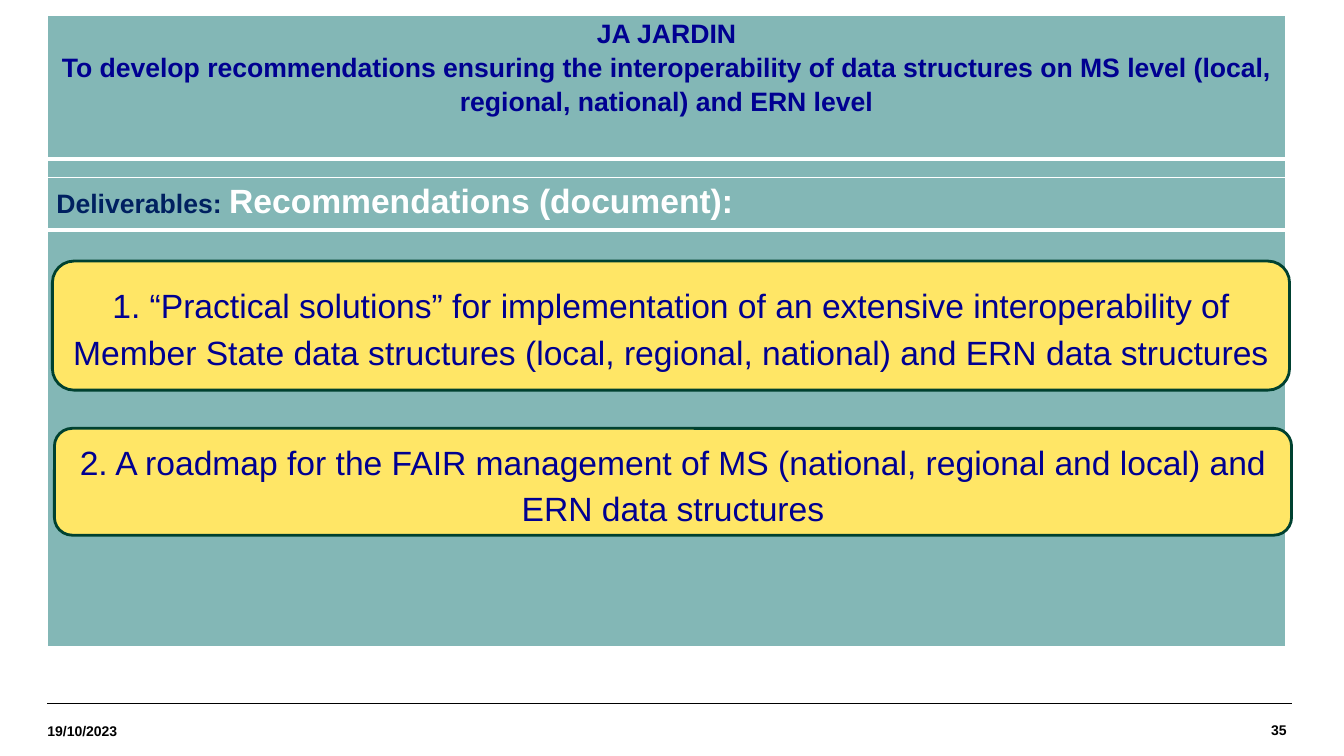
from pptx import Presentation
from pptx.util import Inches, Pt
from pptx.dml.color import RGBColor
from pptx.enum.shapes import MSO_CONNECTOR, MSO_SHAPE
from pptx.enum.text import MSO_ANCHOR, PP_ALIGN
from pptx.oxml import parse_xml
from pptx.oxml.ns import nsdecls
from lxml.etree import SubElement

# Content
HEAD = [
    "JA JARDIN",
    "To develop recommendations ensuring the interoperability of data structures "
    "on MS level (local, regional, national) and ERN level",
]
GOALS = [("Deliverables: ", "navy", "head"), ("Recommendations (document):", "white", "body")]
CARDS = [
    ("1. “Practical solutions” for implementation of an extensive interoperability of "
     "Member State data structures (local, regional, national) and ERN data structures",
     0.52, 2.59, 1.28),
    ("2. A roadmap for the FAIR management of MS (national, regional and local) "
     "and ERN data structures", 0.54, 4.25, 1.06),
]
DATE, PAGE = "19/10/2023", "35"

THEME = {
    "font": "Arial",
    "color": {"blue": "000091", "navy": "002060", "white": "FFFFFF", "black": "000000",
              "teal": "83B7B6", "gold": "FFE666", "green": "004130"},
    "size": {"head": 19, "body": 24, "foot": 10},
}
LEFT, WIDTH, RULE = 0.47, 12.28, 6.98


def tint(name):
    return RGBColor.from_string(THEME["color"][name])


def write(frame, paras, align=PP_ALIGN.LEFT, bold=False, space=None, anchor=None):
    """Each paragraph is a list of (text, color, size) runs."""
    frame.word_wrap = True
    if anchor is not None:
        frame.vertical_anchor = anchor
    for i, runs in enumerate(paras):
        para = frame.add_paragraph() if i else frame.paragraphs[0]
        para.alignment = align
        if space:
            para.line_spacing = space
        for text, color, size in runs:
            run = para.add_run()
            run.text = text
            font = run.font
            font.name, font.bold = THEME["font"], bold
            font.size = Pt(THEME["size"][size])
            font.color.rgb = tint(color)


def edge(cell, side, width):
    line = parse_xml(f'<a:ln{side} {nsdecls("a")} w="{Pt(width)}"><a:solidFill>'
                     f'<a:srgbClr val="{THEME["color"]["white"]}"/></a:solidFill></a:ln{side}>')
    cell._tc.get_or_add_tcPr().append(line)


def panel(slide, top, rows):
    """Two teal rows with a thick white rule between them."""
    grid = slide.shapes.add_table(2, 1, Inches(LEFT), Inches(top),
                                  Inches(WIDTH), Inches(sum(rows))).table
    grid.first_row = grid.horz_banding = False
    for i, high in enumerate(rows):
        grid.rows[i].height = Inches(high)
        cell = grid.cell(i, 0)
        cell.margin_left = cell.margin_right = Inches(0.09)
        cell.margin_top = cell.margin_bottom = 0
        for side, width in zip("LRTB", (1, 1, 3 if i else 1, 1 if i else 3)):
            edge(cell, side, width)
        cell.fill.solid()
        cell.fill.fore_color.rgb = tint("teal")
    grid.cell(1, 0).text_frame.paragraphs[0].font.size = Pt(THEME["size"]["foot"])
    return grid.cell(0, 0).text_frame


def label(slide, text, left, top, width, height, align):
    frame = slide.shapes.add_textbox(*map(Inches, (left, top, width, height))).text_frame
    frame.margin_left = frame.margin_right = frame.margin_top = frame.margin_bottom = 0
    write(frame, [[(text, "black", "foot")]], align=align, bold=True, anchor=MSO_ANCHOR.MIDDLE)


def card(slide, text, left, top, height):
    box = slide.shapes.add_shape(MSO_SHAPE.ROUNDED_RECTANGLE, Inches(left), Inches(top),
                                 Inches(12.27), Inches(height))
    box.shadow.inherit = False
    box.fill.solid()
    box.fill.fore_color.rgb = tint("gold")
    box.line.color.rgb = tint("green")
    box.line.width = Pt(2)
    write(box.text_frame, [[(text, "blue", "body")]], align=PP_ALIGN.CENTER,
          space=1.15, anchor=MSO_ANCHOR.MIDDLE)


def main():
    deck = Presentation()
    deck.slide_width, deck.slide_height = Inches(13.33), Inches(7.5)
    slide = deck.slides.add_slide(deck.slide_layouts[6])

    # Footer
    for left in (LEFT, LEFT + 0.05):
        line = slide.shapes.add_connector(MSO_CONNECTOR.STRAIGHT, Inches(left), Inches(RULE),
                                          Inches(left + 12.29), Inches(RULE))
        line.line.color.rgb = tint("black")
        line.line.width = Pt(0.8)
        SubElement(line._element.spPr,
                   "{http://schemas.openxmlformats.org/drawingml/2006/main}effectLst")
    label(slide, PAGE, 10.79, RULE, 1.97, 0.52, PP_ALIGN.RIGHT)
    label(slide, DATE, LEFT, 7, 1.71, 0.5, PP_ALIGN.LEFT)

    # Title and deliverables
    write(panel(slide, 0.15, (1.43, 0.36)), [[(text, "blue", "head")] for text in HEAD],
          align=PP_ALIGN.CENTER, bold=True, space=1.15)
    write(panel(slide, 1.76, (0.52, 4.14)), [GOALS], bold=True, space=1.15)

    # Cards
    for item in CARDS:
        card(slide, *item)

    deck.save("out.pptx")


if __name__ == "__main__":
    main()
